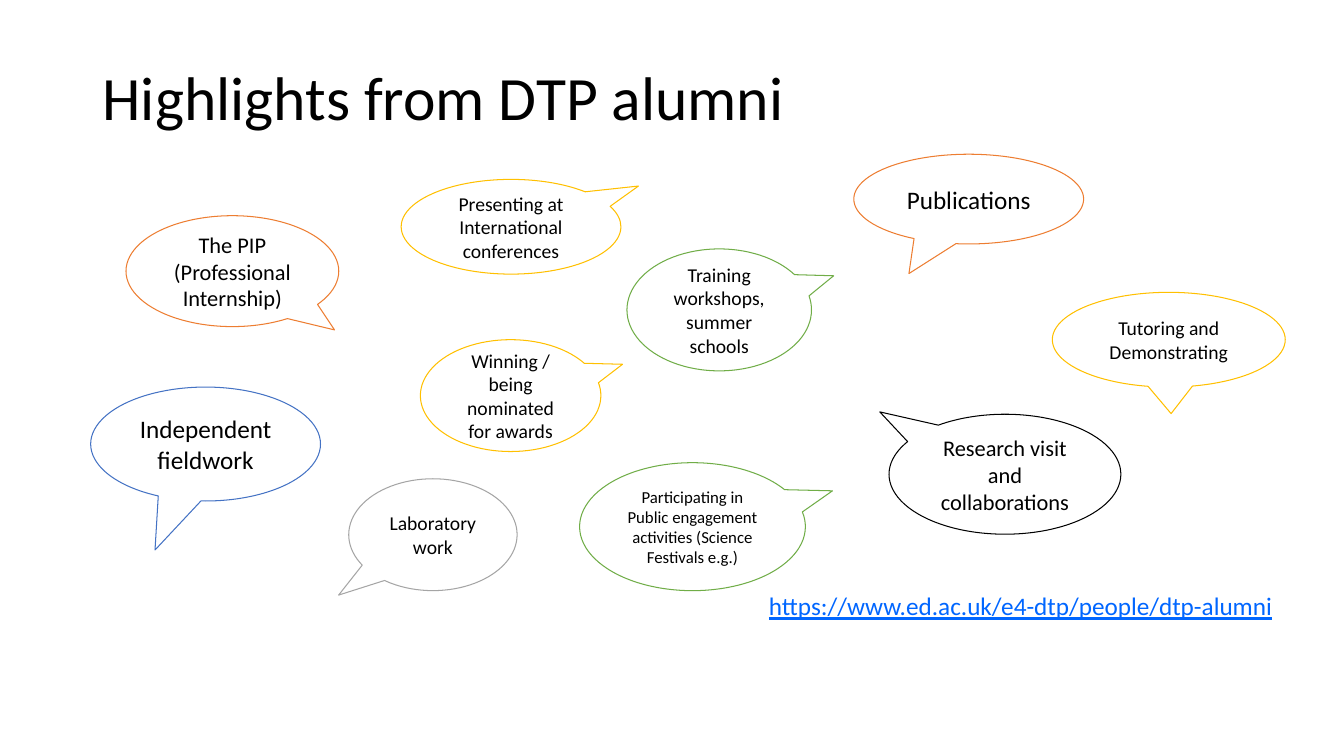
from pptx import Presentation
from pptx.dml.color import RGBColor
from pptx.enum.shapes import MSO_SHAPE
from pptx.enum.text import MSO_ANCHOR, PP_ALIGN
from pptx.util import Inches, Pt

CALLOUT = MSO_SHAPE.OVAL_CALLOUT
MIDDLE = MSO_ANCHOR.MIDDLE
CENTER = PP_ALIGN.CENTER

ORANGE, GOLD, GREEN = "ED7D31", "FFC000", "70AD47"
BLUE, GREY, BLACK, LINK = "4472C4", "A5A5A5", "000000", "0066FF"

presentation = Presentation()
presentation.slide_width = Inches(13.33)
presentation.slide_height = Inches(7.5)
slide = presentation.slides.add_slide(presentation.slide_layouts[6])


def place(left, top, width, height):
    """Turn percentages of the slide's size into lengths."""
    column = presentation.slide_width / 100
    row = presentation.slide_height / 100
    return (round(left * column), round(top * row),
            round(width * column), round(height * row))


def write(shape, text, size, color=BLACK):
    paragraph = shape.text_frame.paragraphs[0]
    paragraph.text = text
    paragraph.font.name = "Calibri"
    paragraph.font.size = Pt(size)
    paragraph.font.color.rgb = RGBColor.from_string(color)
    return paragraph


title = slide.shapes.add_textbox(*place(6.9, 8.13, 89.2, 10.4))
title.text_frame.word_wrap = True
title.text_frame.vertical_anchor = MIDDLE
write(title, "Highlights from DTP alumni", 44).line_spacing = 0.9

# Text, size, outline, (left, top, width, height) in percent, tip from centre
RIGHT_TIP = (0.62, -0.28)
highlights = [
    ("Publications", 18, ORANGE, (63.53, 20.4, 17.1, 11.87), (-0.26, 0.83)),
    ("Presenting at International conferences", 14, GOLD,
     (29.85, 23.73, 16.35, 12.53), (0.58, -0.43)),
    ("The PIP (Professional Internship)", 16, ORANGE,
     (9.38, 28.53, 15.83, 14.67), (0.48, 0.53)),
    ("Tutoring and Demonstrating", 14, GOLD,
     (78.3, 38.67, 17.33, 12.53), (0.01, 0.78)),
    ("Research visit and collaborations", 16, BLACK,
     (66.15, 54.8, 17.25, 15.87), (-0.54, -0.52)),
    ("Independent fieldwork", 18, BLUE,
     (6.75, 51.2, 17.1, 15.07), (-0.22, 0.93)),
    ("Training workshops, summer schools", 14, GREEN,
     (46.65, 32.93, 13.73, 16.13), RIGHT_TIP),
    ("Winning / being nominated for awards", 14, GOLD,
     (31.28, 44.93, 13.43, 14.8), RIGHT_TIP),
    ("Laboratory work", 14, GREY, (25.95, 63.33, 12.53, 14.8), (-0.56, 0.54)),
    ("Participating in Public engagement activities (Science Festivals e.g.)",
     12, GREEN, (43.13, 61.2, 16.8, 16.93), RIGHT_TIP),
]
for text, size, outline, area, (tip_x, tip_y) in highlights:
    bubble = slide.shapes.add_shape(CALLOUT, *place(*area))
    bubble.adjustments[0] = tip_x
    bubble.adjustments[1] = tip_y
    bubble.shadow.inherit = False
    bubble.fill.background()
    bubble.line.color.rgb = RGBColor.from_string(outline)
    bubble.line.width = Pt(0.75)
    bubble.text_frame.word_wrap = True
    bubble.text_frame.vertical_anchor = MIDDLE
    write(bubble, text, size).alignment = CENTER

address = slide.shapes.add_textbox(*place(56.48, 77.47, 40.35, 5.33))
address.text_frame.word_wrap = False
write(address, "https://www.ed.ac.uk/e4-dtp/people/dtp-alumni", 18,
      LINK).font.underline = True

presentation.save("out.pptx")
